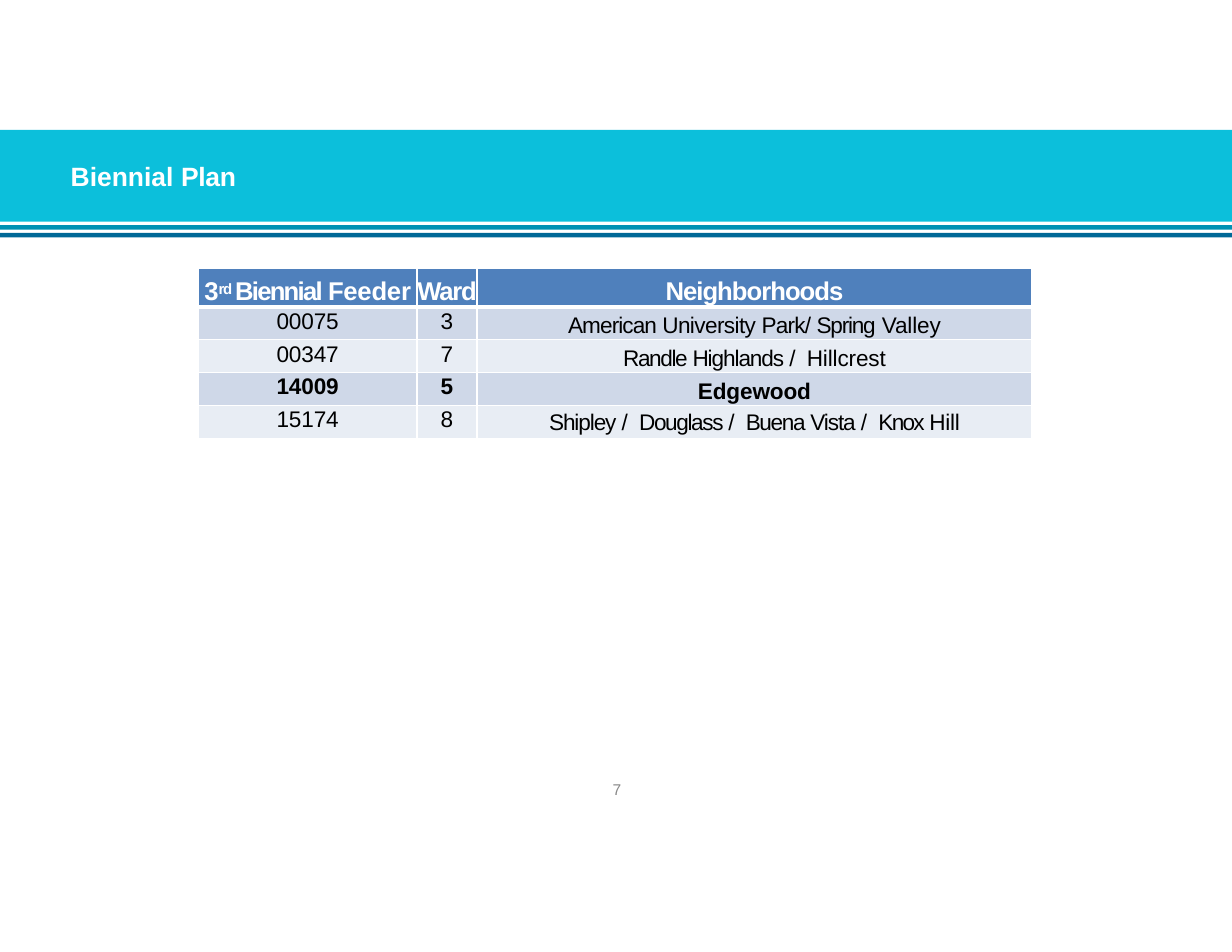
from lxml import etree
from pptx import Presentation
from pptx.dml.color import RGBColor
from pptx.enum import shapes, text
from pptx.oxml import ns
from pptx.util import Pt

COLORS = {
    "band": "0CBFDB", "stripe": "0091B3", "deep stripe": "006997",
    "header": "4F80BC", "odd row": "CFD8E8", "even row": "E8EDF4",
    "white": "FFFFFF", "black": "000000", "gray": "898989",
}


def write(para, spans, size, color, bold=False):
    """Fill a paragraph with (wording, letter spacing in points) spans."""
    for wording, spacing in spans:
        span = para.add_run()
        span.text = wording
        span.font._element.set("spc", str(round(spacing * 100)))
    para.font.name = "Arial"
    para.font.size = Pt(size)
    para.font.bold = bold
    para.font.color.rgb = RGBColor.from_string(COLORS[color])


def set_borders(cell, widths):
    """Draw white borders; widths are left, right, top, bottom in points."""
    properties = cell._tc.get_or_add_tcPr()
    for index, (side, width) in enumerate(zip("LRTB", widths)):
        line = etree.Element(ns.qn(f"a:ln{side}"), w=str(Pt(width)))
        fill = etree.SubElement(line, ns.qn("a:solidFill"))
        etree.SubElement(fill, ns.qn("a:srgbClr"), val=COLORS["white"])
        properties.insert(index, line)


deck = Presentation()
deck.slide_width, deck.slide_height = Pt(792), Pt(612)
page = deck.slides.add_slide(deck.slide_layouts[5])

# Bands across the page
for color, top, height in [("band", 83.5, 59), ("stripe", 144.7, 2.9),
                           ("deep stripe", 149.8, 2.9)]:
    band = page.shapes.add_shape(shapes.MSO_SHAPE.RECTANGLE,
                                 0, Pt(top), deck.slide_width, Pt(height))
    band.shadow.inherit = False
    band.fill.solid()
    band.fill.fore_color.rgb = RGBColor.from_string(COLORS[color])
    band.line.fill.background()

# Title, moved in front of the bands
title = page.shapes.title
page.shapes._spTree.append(title._element)
title.left, title.top, title.width, title.height = Pt(45.4), Pt(101.5), Pt(112), Pt(23)
number = page.shapes.add_textbox(Pt(393.8), Pt(503.3), Pt(11.5), Pt(12.2))
for box, top_margin in [(title, 1.4), (number, 0)]:
    frame = box.text_frame
    frame.word_wrap = True
    frame.auto_size = text.MSO_AUTO_SIZE.NONE
    frame.vertical_anchor = text.MSO_ANCHOR.TOP
    frame.margin_left = frame.margin_right = frame.margin_bottom = 0
    frame.margin_top = Pt(top_margin)
    frame.paragraphs[0].alignment = text.PP_ALIGN.LEFT
write(title.text_frame.paragraphs[0], [("Biennial ", 0), ("Plan", -0.2)],
      17, "white", True)
number.text_frame.paragraphs[0].line_spacing = Pt(10.4)
write(number.text_frame.paragraphs[0], [("7", -0.6)], 10, "gray")

# Feeder table
slash = ("/ ", 1.6)
rows = [
    [[("3", -0.5), ("rd ", -0.8), ("Biennial ", -1.1), ("Feeder", -0.1)],
     [("Ward", -0.8)], [("Neighborhoods", -0.6)]],
    [[("00075", -0.1)], [("3", 0)],
     [("American ", -0.6), ("University ", -0.4), ("Park/ ", -0.5),
      ("Spring", -0.8), (" Valley", -0.1)]],
    [[("00347", -0.1)], [("7", 0)],
     [("Randle ", -0.9), ("Highlands ", -0.7), slash, ("Hillcrest", -0.1)]],
    [[("14009", -0.1)], [("5", 0)], [("Edgewood", -0.1)]],
    [[("15174", -0.1)], [("8", 0)],
     [("Shipley ", -0.7), slash, ("Douglass ", -0.9), slash, ("Buena ", -0.9),
      ("Vista ", -0.7), slash, ("Knox ", -1.1), ("Hill", -0.2)]],
]
bold_rows = (0, 3)
table = page.shapes.add_table(len(rows), 3, Pt(127.6), Pt(172.2),
                              Pt(535.7), Pt(109.8)).table
for column, width in zip(table.columns, (140.4, 38.7, 356.6)):
    column.width = Pt(width)

for r, row in enumerate(rows):
    header = r == 0
    table.rows[r].height = Pt(25 if header else 21.2)
    color = "header" if header else ("odd row" if r % 2 else "even row")
    for c, spans in enumerate(row):
        cell = table.cell(r, c)
        cell.fill.solid()
        cell.fill.fore_color.rgb = RGBColor.from_string(COLORS[color])
        set_borders(cell, (1, 1, 3 if r == 1 else 1, 3 if header else 1))
        cell.margin_left = cell.margin_right = cell.margin_bottom = 0
        cell.margin_top = Pt(4.5 if header else 2.9 if c == 2 else 1.2)
        para = cell.text_frame.paragraphs[0]
        para.alignment = text.PP_ALIGN.CENTER
        if header:
            para.line_spacing = Pt(19.7)
        elif c == 2 and r < len(rows) - 1:
            para.line_spacing = Pt(17.4)
        write(para, spans, 16.5 if header else 14.5,
              "white" if header else "black", r in bold_rows)

ordinal = table.cell(0, 0).text_frame.paragraphs[0].runs[1]
ordinal.font._element.set("baseline", "20000")

deck.save("out.pptx")
